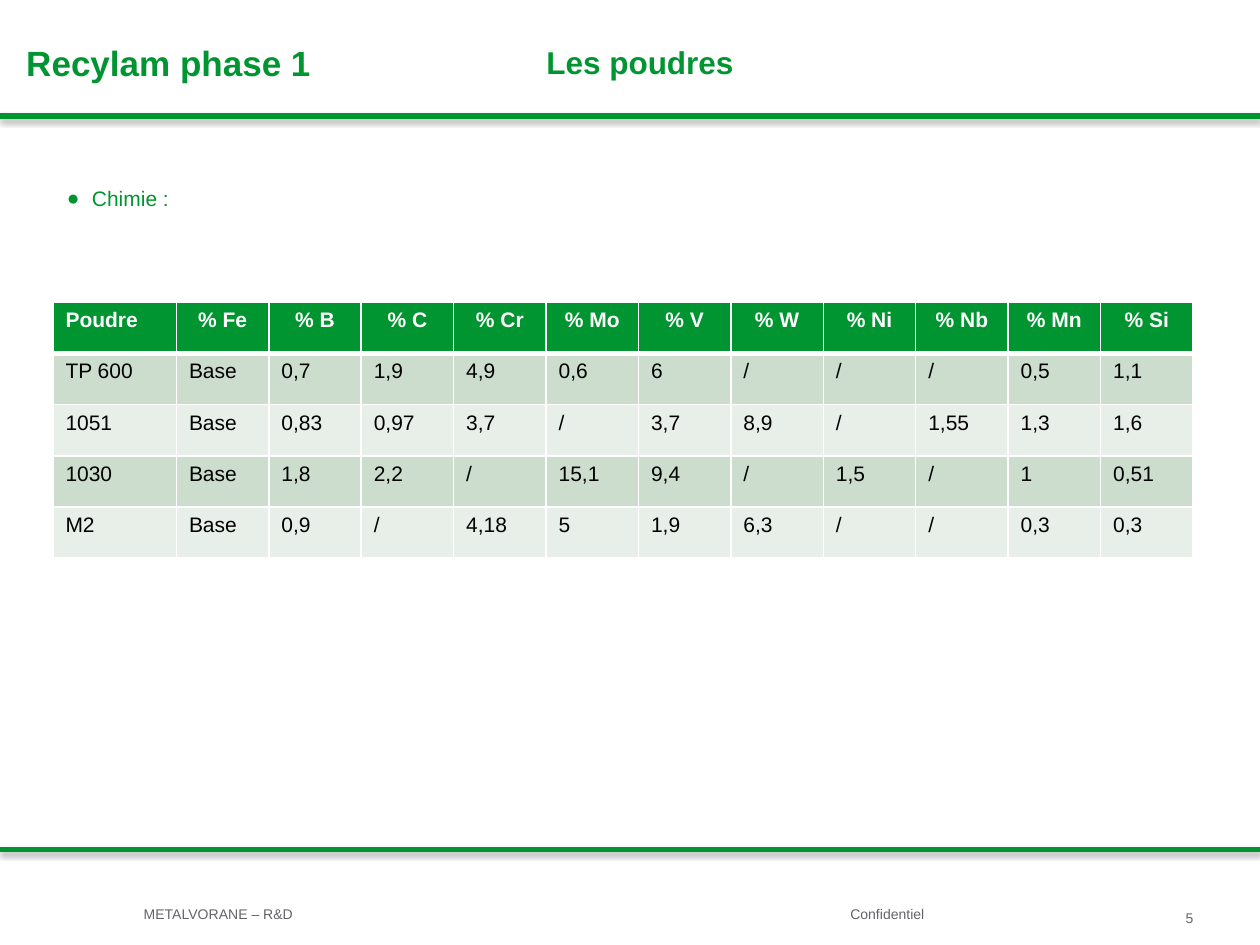
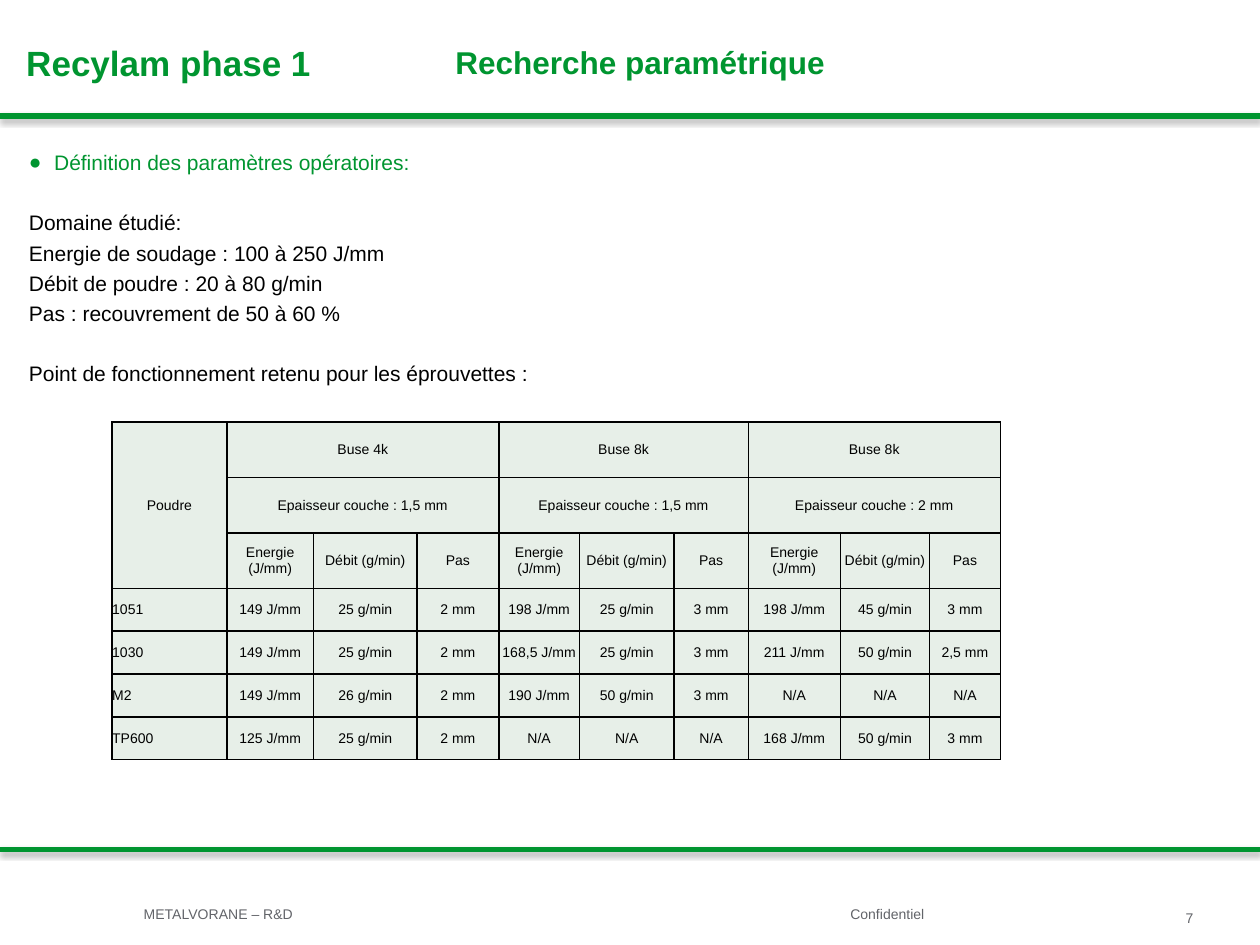
from lxml import etree
from pptx import Presentation, util as u
from pptx.dml.color import RGBColor
from pptx.enum import shapes, text
from pptx.oxml import parse_xml
from pptx.oxml.ns import nsdecls, qn

# Shared style
GREEN = RGBColor(0x00, 0x95, 0x30)
GREY = RGBColor(0x62, 0x64, 0x69)
BLACK = RGBColor(0x00, 0x00, 0x00)
WHITE = RGBColor(0xFF, 0xFF, 0xFF)
BAND_DARK = RGBColor(0xCC, 0xDD, 0xCD)
BAND_LIGHT = RGBColor(0xE7, 0xEF, 0xE8)
FONT = "Arial"
CENTER = text.PP_ALIGN.CENTER
LEFT = text.PP_ALIGN.LEFT
MIDDLE = text.MSO_ANCHOR.MIDDLE
NO_MARGINS = (0, 0, 0, 0)
BOX_MARGINS = (0.1, 0.05, 0.1, 0.05)
LINE_GAP, SECTION_GAP = 2.9, 19.9

# Shared content
PROJECT = "Recylam phase 1"
RULE_TOPS = (0.92, 6.74)
FOOTERS = [
    ("METALVORANE – R&D", (1.14, 7.19, 3.3, 0.13), NO_MARGINS),
    ("Confidentiel", (6.65, 7.14, 2.76, 0.24), BOX_MARGINS),
]
NUMBER_AREA = (9.41, 7.22, 0.32, 0.08)

# Slide contents
CHEMISTRY = [
    ["Poudre"] + [f"% {element}" for element in "Fe B C Cr Mo V W Ni Nb Mn Si".split()],
    ["TP 600"] + "Base 0,7 1,9 4,9 0,6 6 / / / 0,5 1,1".split(),
    ["1051"] + "Base 0,83 0,97 3,7 / 3,7 8,9 / 1,55 1,3 1,6".split(),
    ["1030"] + "Base 1,8 2,2 / 15,1 9,4 / 1,5 / 1 0,51".split(),
    ["M2"] + "Base 0,9 / 4,18 5 1,9 6,3 / / 0,3 0,3".split(),
]
NOZZLES = [
    ("Buse 4k", "Epaisseur couche : 1,5 mm"),
    ("Buse 8k", "Epaisseur couche : 1,5 mm"),
    ("Buse 8k", "Epaisseur couche : 2 mm"),
]
MEASURES = ["Energie\n(J/mm)", "Débit (g/min)", "Pas"]
NA = ["N/A"] * 3
SETTINGS = [
    ["1051", "149 J/mm", "25 g/min", "2 mm", "198 J/mm", "25 g/min", "3 mm",
     "198 J/mm", "45 g/min", "3 mm"],
    ["1030", "149 J/mm", "25 g/min", "2 mm", "168,5 J/mm", "25 g/min", "3 mm",
     "211 J/mm", "50 g/min", "2,5 mm"],
    ["M2", "149 J/mm", "26 g/min", "2 mm", "190 J/mm", "50 g/min", "3 mm", *NA],
    ["TP600", "125 J/mm", "25 g/min", "2 mm", *NA, "168 J/mm", "50 g/min", "3 mm"],
]
SETTING_WIDTHS = [0.91, 0.69, 0.82, 0.65, 0.64, 0.75, 0.59, 0.73, 0.71, 0.56]
STUDY_LINES = [
    ("Domaine étudié:", SECTION_GAP),
    ("Energie de soudage : 100 à 250 J/mm", LINE_GAP),
    ("Débit de poudre : 20 à 80 g/min", LINE_GAP),
    ("Pas : recouvrement de 50 à 60 %", LINE_GAP),
    ("Point de fonctionnement retenu pour les éprouvettes :", SECTION_GAP),
]


def inches(values):
    return [u.Inches(value) for value in values]


def place(shape, area):
    shape.left, shape.top, shape.width, shape.height = inches(area)


def set_margins(target, margins):
    (target.margin_left, target.margin_top,
     target.margin_right, target.margin_bottom) = inches(margins)


def write(frame, words, size=12, color=BLACK, bold=False, align=LEFT,
          before=0, bullet=None, add=False):
    """Write one paragraph per line of words, in one format."""
    for index, line in enumerate(words.split("\n")):
        para = frame.add_paragraph() if add or index else frame.paragraphs[0]
        para.alignment = align
        para.space_before = u.Pt(before)
        props = para._p.get_or_add_pPr()
        indent = u.Inches(0.2) if bullet else 0
        props.set("marL", str(indent))
        props.set("indent", str(-indent))
        if bullet:
            tint = etree.SubElement(props, qn("a:buClr"))
            etree.SubElement(tint, qn("a:srgbClr")).set("val", str(color))
            etree.SubElement(props, qn("a:buFont")).set("typeface", FONT)
            etree.SubElement(props, qn("a:buChar")).set("char", bullet)
        else:
            etree.SubElement(props, qn("a:buNone"))
        span = para.add_run()
        span.text = line
        span.font.name, span.font.size, span.font.bold = FONT, u.Pt(size), bold
        span.font.color.rgb = color


def add_label(page, words, area, margins):
    box = page.shapes.add_textbox(*inches(area))
    box.text_frame.word_wrap = True
    set_margins(box.text_frame, margins)
    write(box.text_frame, words, size=8, color=GREY)


def add_rule(page, top):
    rule = page.shapes.add_connector(
        shapes.MSO_CONNECTOR.STRAIGHT, *inches((0, top, 10, top)))
    rule.line.color.rgb = GREEN
    rule.line.width = u.Pt(3)
    rule._element.spPr.append(parse_xml(
        f'<a:effectLst {nsdecls("a")}><a:outerShdw blurRad="{u.Pt(3.1)}" '
        f'dist="{u.Pt(1.8)}" dir="5400000" rotWithShape="0"><a:srgbClr val="000000">'
        '<a:alpha val="35000"/></a:srgbClr></a:outerShdw></a:effectLst>'))


def start_page(deck, title, number, bullet, body_area):
    """Add a page with its shared parts; return it and its body text frame."""
    page = deck.slides.add_slide(deck.slide_layouts[1])
    heading, body = page.placeholders

    place(heading, (2.67, 0.08, 4.82, 0.83))
    frame = heading.text_frame
    frame.auto_size = text.MSO_AUTO_SIZE.NONE
    frame.vertical_anchor = MIDDLE
    set_margins(frame, (0, 0.01, 0, 0.01))
    write(frame, title, size=18, color=GREEN, bold=True, align=CENTER)

    place(body, body_area)
    body.text_frame.auto_size = text.MSO_AUTO_SIZE.NONE
    set_margins(body.text_frame, (0, 0.28, 0.02, 0.01))
    write(body.text_frame, bullet, color=GREEN, bullet="●")

    # Project name, rules and footers
    for top in RULE_TOPS:
        add_rule(page, top)
    project = page.shapes.add_shape(
        shapes.MSO_SHAPE.RECTANGLE, *inches((0.11, 0.28, 2.92, 0.44)))
    project.shadow.inherit = False
    project.fill.solid()
    project.fill.fore_color.rgb = WHITE
    project.line.fill.background()
    write(project.text_frame, PROJECT, size=20, color=GREEN, bold=True)
    for words, area, margins in FOOTERS:
        add_label(page, words, area, margins)
    add_label(page, str(number), NUMBER_AREA, NO_MARGINS)
    return page, body.text_frame


def add_grid(page, left, top, widths, heights):
    area = inches((left, top, sum(widths), sum(heights)))
    table = page.shapes.add_table(len(heights), len(widths), *area).table
    table.first_row = table.horz_banding = False
    for column, width in zip(table.columns, widths):
        column.width = u.Inches(width)
    for row, height in zip(table.rows, heights):
        row.height = u.Inches(height)
    return table


def style_cell(cell, fill, border, top=1, bottom=1):
    props = cell._tc.get_or_add_tcPr()
    for side, width in (("L", 1), ("R", 1), ("T", top), ("B", bottom)):
        props.append(parse_xml(
            f'<a:ln{side} {nsdecls("a")} w="{u.Pt(width)}"><a:solidFill>'
            f'<a:srgbClr val="{border}"/></a:solidFill></a:ln{side}>'))
    cell.fill.solid()
    cell.fill.fore_color.rgb = fill


def build_powders(deck):
    page, _ = start_page(deck, "Les poudres", 5, "Chimie :", (0.53, 1.19, 8.26, 5.36))
    columns = len(CHEMISTRY[0])
    widths = [0.98] + [8.07 / (columns - 1)] * (columns - 1)
    table = add_grid(page, 0.42, 2.4, widths, [2.03 / len(CHEMISTRY)] * len(CHEMISTRY))
    for r, values in enumerate(CHEMISTRY):
        header = r == 0
        fill = GREEN if header else (BAND_LIGHT, BAND_DARK)[r % 2]
        for c, value in enumerate(values):
            cell = table.cell(r, c)
            style_cell(cell, fill, WHITE, top=3 if r == 1 else 1, bottom=3 if header else 1)
            write(cell.text_frame, value, color=WHITE if header else BLACK,
                  bold=header, align=CENTER if header and c else LEFT)


def build_settings(deck):
    page, body = start_page(deck, "Recherche paramétrique", 7,
                            "Définition des paramètres opératoires:",
                            (0.23, 0.91, 9.71, 5.36))
    for line, gap in STUDY_LINES:
        write(body, line, before=gap, add=True)

    # Three header rows, then one row per powder
    table = add_grid(page, 0.89, 3.35, SETTING_WIDTHS,
                     [0.44] * 3 + [0.34] * len(SETTINGS))
    group = len(MEASURES)
    headers = [[""] * len(SETTING_WIDTHS) for _ in range(2)]
    headers.append([""] + MEASURES * len(NOZZLES))
    headers[0][0] = "Poudre"
    table.cell(0, 0).merge(table.cell(2, 0))
    for n, captions in enumerate(NOZZLES):
        first = 1 + n * group
        for r, caption in enumerate(captions):
            headers[r][first] = caption
            table.cell(r, first).merge(table.cell(r, first + group - 1))

    for r, values in enumerate(headers + SETTINGS):
        for c, value in enumerate(values):
            cell = table.cell(r, c)
            style_cell(cell, BAND_LIGHT, BLACK)
            set_margins(cell, NO_MARGINS)
            cell.vertical_anchor = MIDDLE
            if value:
                align = LEFT if c == 0 and r >= len(headers) else CENTER
                write(cell.text_frame, value, size=8, align=align)


def main():
    deck = Presentation()
    deck.slide_width, deck.slide_height = inches((10, 7.5))
    build_powders(deck)
    build_settings(deck)
    deck.save("out.pptx")


if __name__ == "__main__":
    main()
